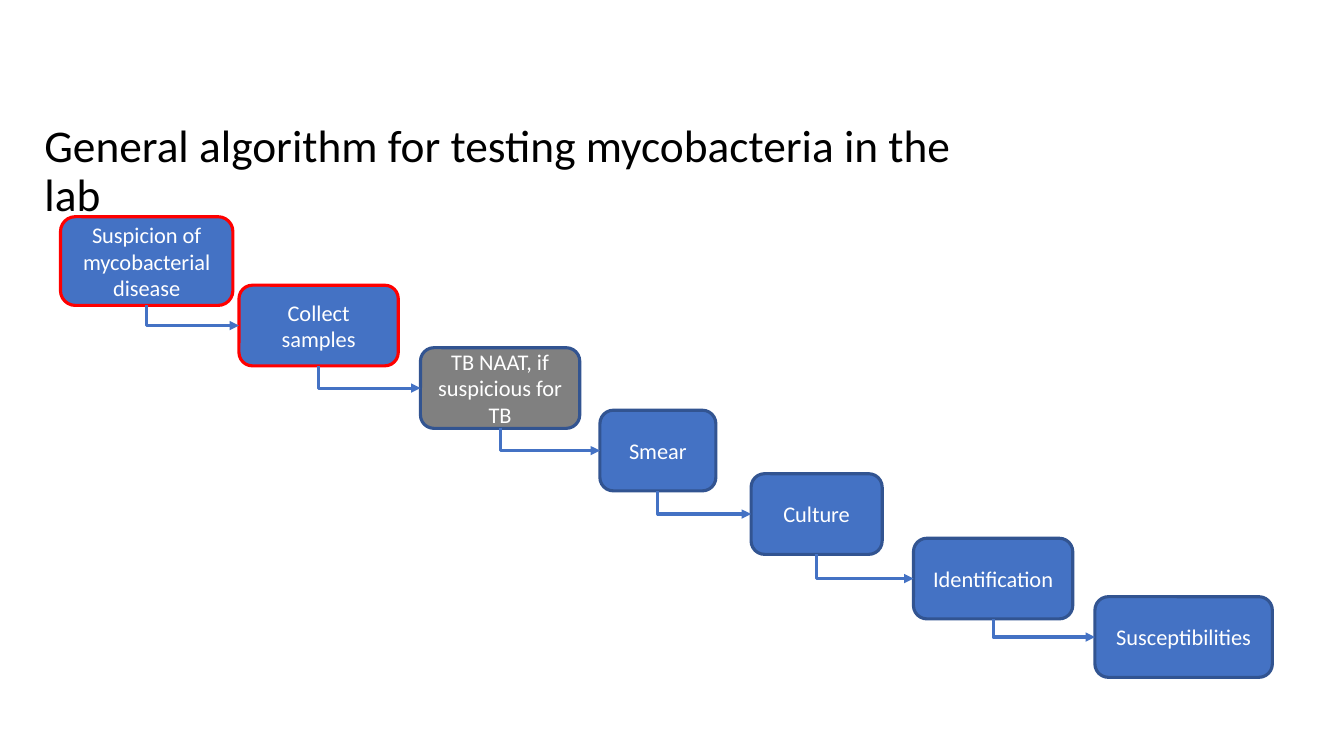
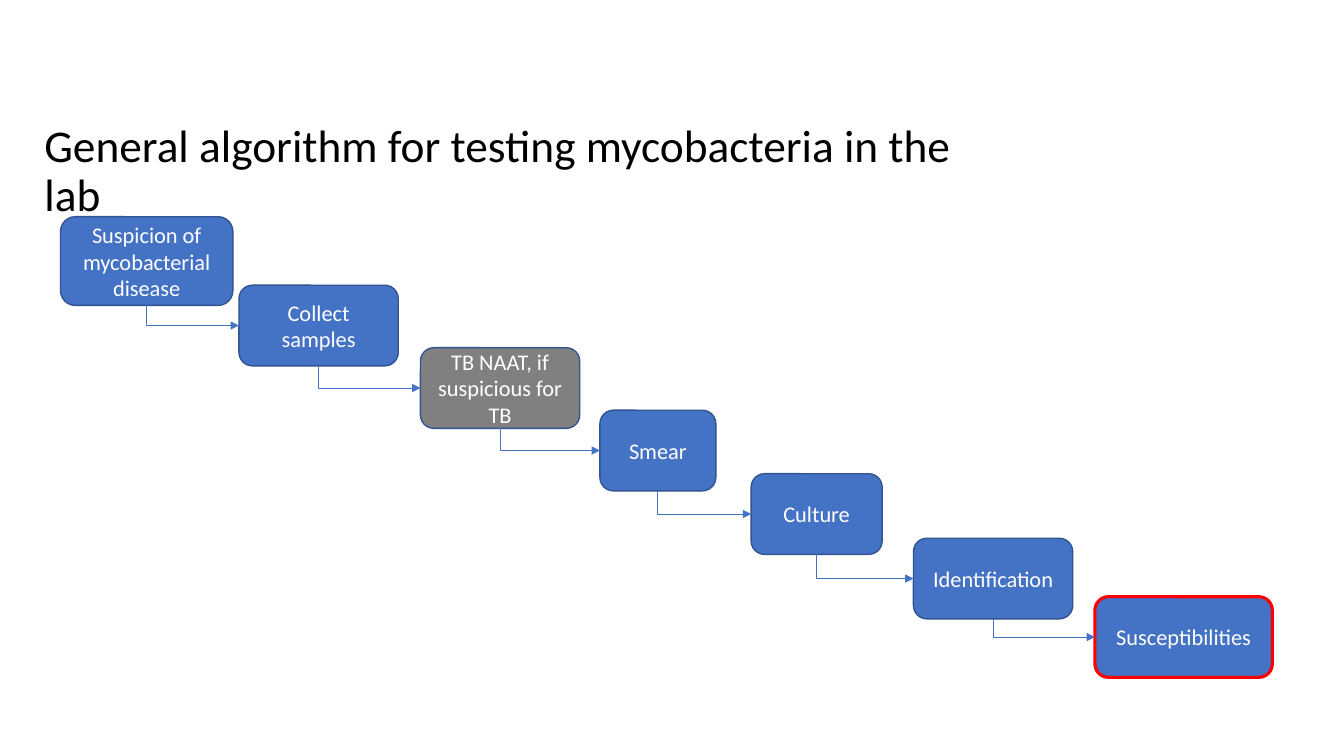
from lxml import etree
from pptx import Presentation
from pptx.dml.color import RGBColor
from pptx.enum.shapes import MSO_CONNECTOR, MSO_SHAPE
from pptx.enum.text import MSO_ANCHOR, MSO_AUTO_SIZE, PP_ALIGN
from pptx.oxml.ns import qn
from pptx.util import Inches, Pt

ELBOW = MSO_CONNECTOR.ELBOW
ROUNDED = MSO_SHAPE.ROUNDED_RECTANGLE
TOP, MIDDLE = MSO_ANCHOR.TOP, MSO_ANCHOR.MIDDLE
LEFT, CENTER = PP_ALIGN.LEFT, PP_ALIGN.CENTER
NO_AUTOFIT = MSO_AUTO_SIZE.NONE

FONT = "Calibri"
BLACK, WHITE = "000000", "FFFFFF"
BLUE, NAVY, GRAY, RED = "4472C4", "325491", "808080", "FF0000"
TITLE_ONLY = 5
BOTTOM_SITE, LEFT_SITE = 2, 1
HIGHLIGHT_WIDTH = 2.25

TITLE = "General algorithm for testing mycobacteria in the lab"
TITLE_BOX = (0.34, 1.17, 9.76, 0.98)
STAIRCASE_ORIGIN = (0.6, 2.15)

# Each step: paragraphs, fill, and box relative to the staircase origin
STEPS = [
    (["Suspicion of mycobacterial disease"], BLUE, (0, 0, 1.71, 0.88)),
    (["Collect", "samples"], BLUE, (1.77, 0.68, 1.58, 0.8)),
    (["TB NAAT, if suspicious for TB"], GRAY, (3.57, 1.3, 1.58, 0.8)),
    (["Smear"], BLUE, (5.35, 1.92, 1.15, 0.8)),
    (["Culture"], BLUE, (6.85, 2.55, 1.3, 0.8)),
    (["Identification"], BLUE, (8.46, 3.19, 1.58, 0.8)),
    (["Susceptibilities"], BLUE, (10.26, 3.77, 1.76, 0.8)),
]

# Each slide: highlighted steps, box outline width, arrow width
SLIDES = [
    ({0, 1}, 2.25, 2.25),
    ({6}, 1, 0.5),
]


def color(value):
    return RGBColor.from_string(value)


def write_text(shape, lines, size, ink, align=CENTER, anchor=MIDDLE, spacing=None):
    frame = shape.text_frame
    frame.word_wrap = True
    frame.auto_size = NO_AUTOFIT
    frame.vertical_anchor = anchor
    for index, line in enumerate(lines):
        para = frame.add_paragraph() if index else frame.paragraphs[0]
        para.alignment = align
        if spacing:
            para.line_spacing = spacing
        span = para.add_run()
        span.text = line
        span.font.name = FONT
        span.font.size = Pt(size)
        span.font.color.rgb = color(ink)


def add_title(page, box):
    title = page.shapes.title
    title.left, title.top, title.width, title.height = map(Inches, box)
    write_text(title, [TITLE], 32.4, BLACK, align=LEFT, anchor=TOP, spacing=0.9)


def add_step(page, lines, fill, box, outline, width):
    step = page.shapes.add_shape(ROUNDED, *map(Inches, box))
    step.shadow.inherit = False
    step.fill.solid()
    step.fill.fore_color.rgb = color(fill)
    step.line.color.rgb = color(outline)
    step.line.width = Pt(width)
    write_text(step, lines, 16, WHITE)
    return step


def add_arrow(page, source, target, width):
    """Run down from the source's bottom, then right to the target's left side."""
    start_x, start_y = source.left + source.width // 2, source.top + source.height
    end_x, end_y = target.left, target.top + target.height // 2
    run, drop = end_x - start_x, end_y - start_y
    arrow = page.shapes.add_connector(ELBOW, start_x, start_y, end_x, end_y)
    arrow.begin_connect(source, BOTTOM_SITE)
    arrow.end_connect(target, LEFT_SITE)
    arrow.line.color.rgb = color(BLUE)
    arrow.line.width = Pt(width)

    # A single-bend connector is stored unrotated around its centre
    arrow.left = (start_x + end_x - drop) // 2
    arrow.top = (start_y + end_y - run) // 2
    arrow.width, arrow.height = drop, run
    properties = arrow.element.spPr
    frame = properties.find(qn("a:xfrm"))
    frame.set("rot", "16200000")
    frame.set("flipH", "1")
    properties.find(qn("a:prstGeom")).set("prst", "bentConnector2")

    # Arrowhead, and no shadow
    outline = properties.find(qn("a:ln"))
    etree.SubElement(outline, qn("a:tailEnd")).set("type", "triangle")
    etree.SubElement(properties, qn("a:effectLst"))


def add_staircase(page, origin, highlighted, box_width, arrow_width):
    previous = None
    for index, (lines, fill, (x, y, width, height)) in enumerate(STEPS):
        marked = index in highlighted
        step = add_step(
            page, lines, fill,
            (origin[0] + x, origin[1] + y, width, height),
            RED if marked else NAVY,
            HIGHLIGHT_WIDTH if marked else box_width,
        )
        if previous is not None:
            add_arrow(page, previous, step, arrow_width)
        previous = step


def main():
    deck = Presentation()
    deck.slide_width, deck.slide_height = Inches(13.33), Inches(7.5)
    for highlighted, box_width, arrow_width in SLIDES:
        page = deck.slides.add_slide(deck.slide_layouts[TITLE_ONLY])
        add_title(page, TITLE_BOX)
        add_staircase(page, STAIRCASE_ORIGIN, highlighted, box_width, arrow_width)
    deck.save("out.pptx")


if __name__ == "__main__":
    main()
